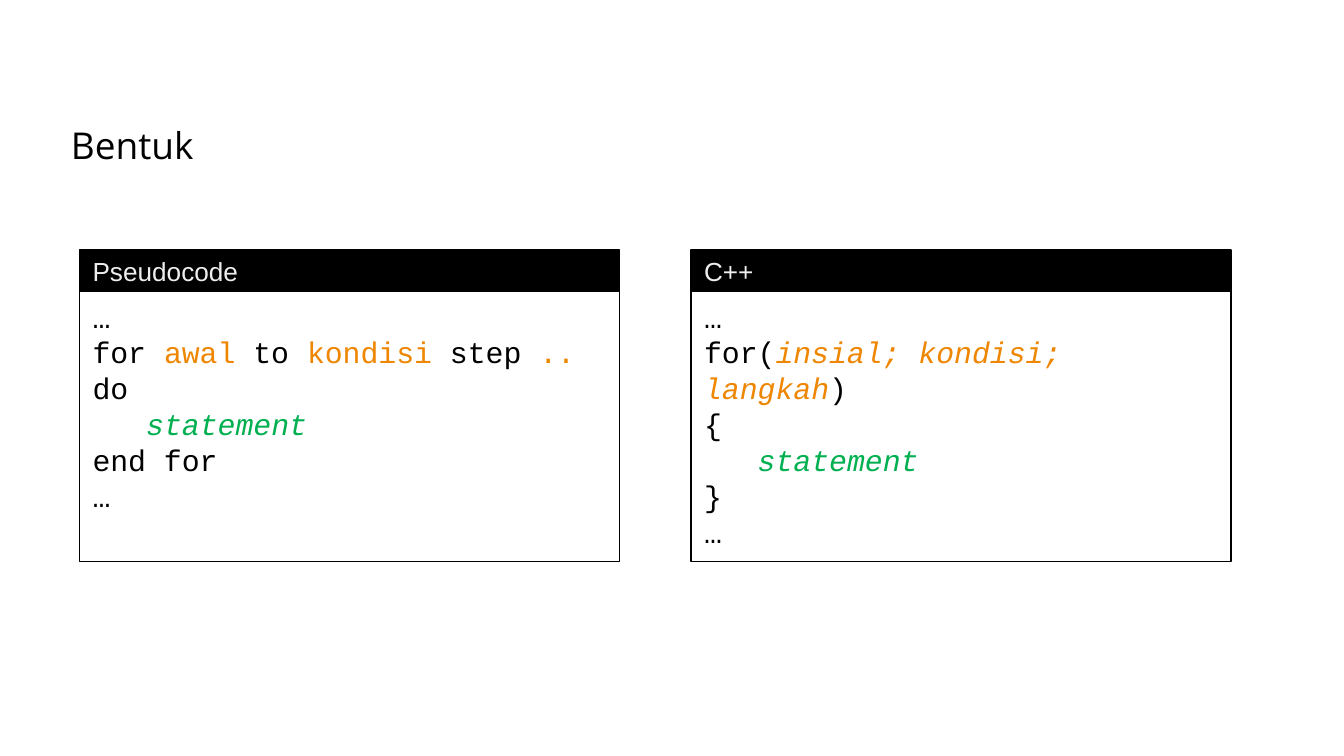
from dataclasses import dataclass

from pptx import Presentation
from pptx.dml.color import RGBColor
from pptx.enum.shapes import MSO_SHAPE
from pptx.enum.text import MSO_ANCHOR, PP_ALIGN
from pptx.util import Inches, Pt

HUES = {"ink": "000000", "pale": "EEEEEE", "term": "EF8600", "body": "00B050"}


@dataclass
class Span:
    text: str
    hue: str = "ink"
    slant: bool = False


@dataclass
class Panel:
    left: float
    title: str
    code: list[list[Span]]


def color(name: str) -> RGBColor:
    return RGBColor.from_string(HUES[name])


def write(frame, lines: list[list[Span]], font: str, size: float) -> None:
    """Fill a text frame, one paragraph per line."""
    for row, line in enumerate(lines):
        para = frame.paragraphs[0] if row == 0 else frame.add_paragraph()
        para.alignment = PP_ALIGN.LEFT
        for span in line:
            run = para.add_run()
            run.text = span.text
            run.font.name = font
            run.font.size = Pt(size)
            run.font.italic = span.slant
            run.font.color.rgb = color(span.hue)


def draw_box(slide, left: float, top: float, height: float, filled: bool):
    """Draw an outlined box and return its text frame."""
    box = slide.shapes.add_shape(MSO_SHAPE.RECTANGLE, Inches(left), Inches(top),
                                 Inches(4.02), Inches(height))
    box.shadow.inherit = False
    if filled:
        box.fill.solid()
        box.fill.fore_color.rgb = color("ink")
    else:
        box.fill.background()
    box.line.color.rgb = color("ink")
    box.line.width = Pt(0.75)
    frame = box.text_frame
    frame.word_wrap = not filled
    frame.vertical_anchor = MSO_ANCHOR.MIDDLE if filled else MSO_ANCHOR.TOP
    return frame


def draw_panel(slide, panel: Panel) -> None:
    top, head = 1.86, 0.31
    code = draw_box(slide, panel.left, top + head, 2.01, False)
    write(code, panel.code, "Courier New", 16)
    title = draw_box(slide, panel.left, top, head, True)
    write(title, [[Span(panel.title, "pale")]], "Arial", 14)


# Code shown in the two panels
dots = [Span("…")]
inner = [Span("   "), Span("statement", "body", True)]
panels = [
    Panel(0.59, "Pseudocode", [
        dots,
        [Span("for "), Span("awal", "term"), Span(" to "),
         Span("kondisi", "term"), Span(" step "), Span("..", "term"),
         Span(" do")],
        inner,
        [Span("end for")],
        dots,
    ]),
    Panel(5.14, "C++", [
        dots,
        [Span("for("), Span("insial; kondisi; langkah", "term", True), Span(")")],
        [Span("{")],
        inner,
        [Span("}")],
        dots,
    ]),
]

# Wide 16:9 slide
deck = Presentation()
deck.slide_width = Inches(10)
deck.slide_height = Inches(10) * 9 // 16
slide = deck.slides.add_slide(deck.slide_layouts[6])

# Heading
head = slide.shapes.add_textbox(Inches(0.43), Inches(0.81),
                                Inches(9.14), Inches(0.43)).text_frame
head.word_wrap = True
head.margin_top = head.margin_bottom = Inches(0.1)
write(head, [[Span("Bentuk")]], "Open Sans", 19.8)

# Panels
for panel in panels:
    draw_panel(slide, panel)

deck.save("out.pptx")
